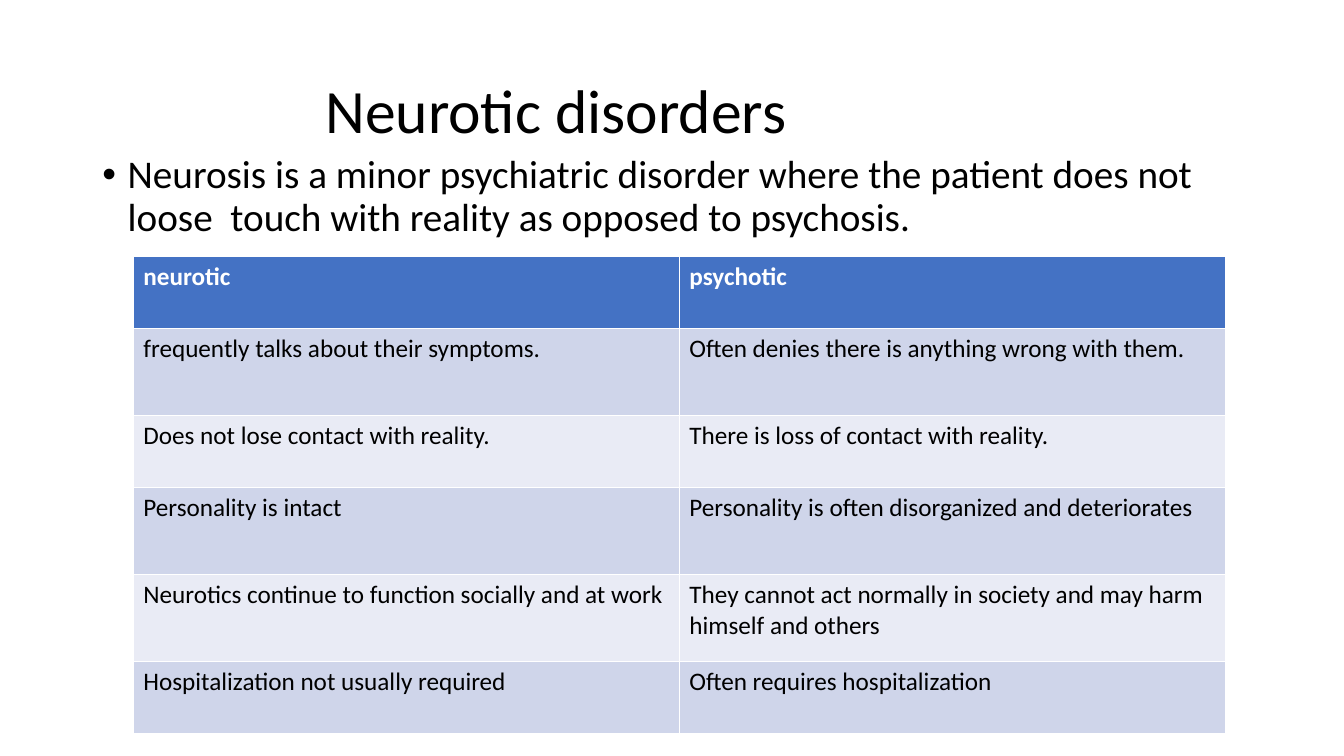
from lxml import etree
from pptx import Presentation, util as u
from pptx.dml.color import RGBColor
from pptx.enum import text
from pptx.oxml.ns import qn

HUES = {"ink": "000000", "paper": "FFFFFF", "head": "4472C4",
        "odd": "CFD5EA", "even": "E9EBF5"}

ROWS = [
    ("neurotic", "psychotic"),
    ("frequently talks about their symptoms.",
     "Often denies there is anything wrong with them."),
    ("Does not lose contact with reality.",
     "There is loss of contact with reality."),
    ("Personality is intact",
     "Personality is often disorganized and deteriorates"),
    ("Neurotics continue to function socially and at work",
     "They cannot act normally in society and may harm himself and others"),
    ("Hospitalization not usually required", "Often requires hospitalization"),
]
SHORT, TALL = 1.82, 2.19
HEIGHTS = [SHORT, TALL, SHORT, TALL, TALL, SHORT]


class Deck:
    face = "Calibri"

    def __init__(self, wide, high):
        self.prs = Presentation()
        self.prs.slide_width, self.prs.slide_height = u.Cm(wide), u.Cm(high)
        self.slide = self.prs.slides.add_slide(self.prs.slide_layouts[5])

    def hue(self, name):
        return RGBColor.from_string(HUES[name])

    def style(self, para, size, hue="ink", bold=False):
        for run in para.runs:
            font = run.font
            font.name, font.size, font.bold = self.face, u.Pt(size), bold
            font.color.rgb = self.hue(hue)

    def title(self, words, box, indent):
        shape = self.slide.shapes.title
        shape.left, shape.top, shape.width, shape.height = map(u.Cm, box)
        frame = shape.text_frame
        frame.text = words
        frame.margin_left = u.Cm(indent)
        frame.vertical_anchor = text.MSO_ANCHOR.MIDDLE
        para = frame.paragraphs[0]
        para.alignment, para.line_spacing = text.PP_ALIGN.LEFT, 0.9
        self.style(para, 44)

    def bullet(self, words, box, hang):
        frame = self.slide.shapes.add_textbox(*map(u.Cm, box)).text_frame
        frame.word_wrap = True
        frame.text = words
        para = frame.paragraphs[0]
        props = para._p.get_or_add_pPr()
        props.set("marL", str(u.Cm(hang)))
        props.set("indent", str(-u.Cm(hang)))
        etree.SubElement(props, qn("a:buFont")).set("typeface", "Arial")
        etree.SubElement(props, qn("a:buChar")).set("char", "•")
        para.line_spacing = 0.9
        self.style(para, 28)

    def table(self, rows, highs, left, top, wide):
        grid = self.slide.shapes.add_table(
            len(rows), len(rows[0]), u.Cm(left), u.Cm(top),
            u.Cm(wide), u.Cm(sum(highs))).table
        for r, (row, high) in enumerate(zip(rows, highs)):
            grid.rows[r].height = u.Cm(high)
            head = r == 0
            fill = "head" if head else "odd" if r % 2 else "even"
            for c, words in enumerate(row):
                cell = grid.cell(r, c)
                cell.fill.solid()
                cell.fill.fore_color.rgb = self.hue(fill)
                cell.text_frame.text = words
                self.style(cell.text_frame.paragraphs[0], 18,
                           "paper" if head else "ink", head)


def main():
    deck = Deck(33.87, 19.05)
    deck.title("Neurotic disorders", (2.33, 1.01, 29.21, 3.68), 5.87)
    deck.bullet("Neurosis is a minor psychiatric disorder where the patient "
                "does not loose  touch with reality as opposed to psychosis.",
                (2.33, 3.78, 29.21, 12.09), 0.64)
    deck.table(ROWS, HEIGHTS, 3.36, 6.46, 27.52)
    deck.prs.save("out.pptx")


if __name__ == "__main__":
    main()
